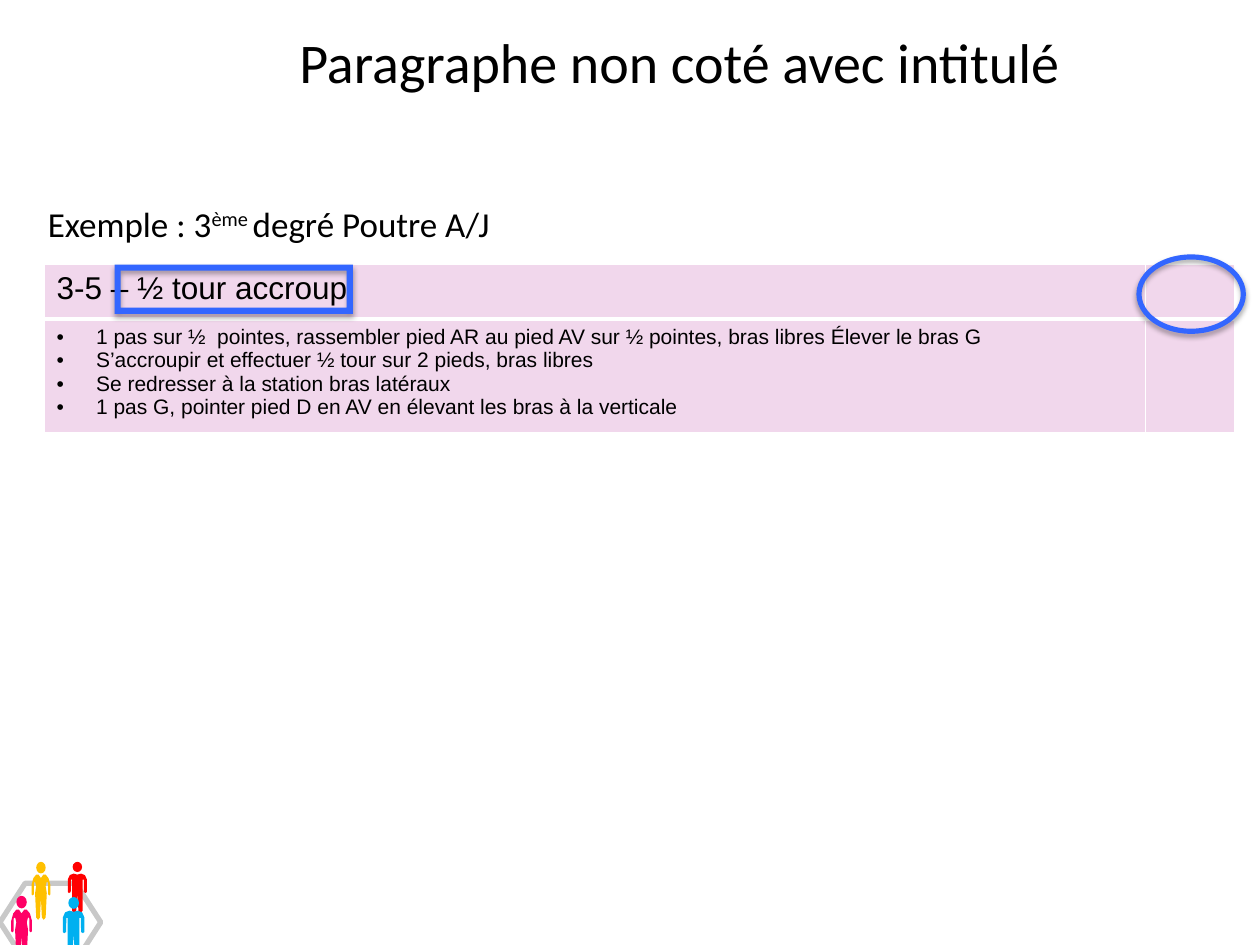
from lxml import etree
from pptx import Presentation
from pptx.dml.color import RGBColor
from pptx.enum.shapes import MSO_SHAPE
from pptx.enum.text import MSO_ANCHOR, PP_ALIGN
from pptx.oxml.ns import qn
from pptx.util import Pt

FRAME, DONUT, OVAL = MSO_SHAPE.FRAME, MSO_SHAPE.DONUT, MSO_SHAPE.OVAL
CENTER, LEFT = PP_ALIGN.CENTER, PP_ALIGN.LEFT
TOP, MIDDLE = MSO_ANCHOR.TOP, MSO_ANCHOR.MIDDLE

COLORS = {"text": "000000", "cell": "F1D7EC", "border": "FFFFFF", "mark": "3366FF",
          "hexagon": "C8C8C8", "pink": "FF0066", "yellow": "FFC000",
          "red": "FF0000", "blue": "00B0F0"}

TITLE = [("Paragraphe non coté avec intitulé", 0)]
EXAMPLE = [("Exemple : 3", 0), ("ème ", 30000), ("degré Poutre A/J", 0)]
ELEMENT = "3-5 – ½ tour accroupi"
STEPS = [
    "1 pas sur ½  pointes, rassembler pied AR au pied AV sur ½ pointes, bras libres Élever le bras G",
    "S’accroupir et effectuer ½ tour sur 2 pieds, bras libres",
    "Se redresser à la station bras latéraux",
    "1 pas G, pointer pied D en AV en élevant les bras à la verticale",
]
COLUMN_WIDTHS = [629.3, 51.1]
ROW_HEIGHTS = [31, 61]
MARKS = [(FRAME, 0.125, (65.5, 151.2, 136.1, 28.1)),
         (DONUT, 0.065, (649.4, 145.4, 62.6, 45.4))]

HEXAGON = [(14.4, 549.4), (0, 527), (14.4, 504.7), (43.2, 504.7), (57.6, 527), (43.2, 549.4)]
DRESS = [(0, .28), (.25, .22), (.5, .22), (.8, .28), (1, .4), (1, .56), (.9, .58),
         (.75, .56), (.75, .36), (.62, .34), (.5, .42), (.62, .54), (.5, .96),
         (.3, 1), (.1, .96), (0, .62)]
SUIT = [(0, .25), (.4, .23), (.8, .26), (1, .34), (1, .59), (.88, .61), (.7, .59),
        (.68, .35), (.55, .35), (.55, .96), (.35, 1), (.12, .96), (0, .63)]
PEOPLE = [("pink", DRESS, (6.4, 511.9, 11.9, 36)), ("yellow", DRESS, (18, 492.5, 10.8, 33.1)),
          ("red", SUIT, (38.8, 492.5, 10.8, 29.2)), ("blue", SUIT, (36, 512.6, 12.2, 33.9))]

prs = Presentation()
prs.slide_width, prs.slide_height = Pt(720), Pt(540)
slide = prs.slides.add_slide(prs.slide_layouts[6])
shapes = slide.shapes


def color(name):
    return RGBColor.from_string(COLORS[name])


def paint(shape, name):
    shape.shadow.inherit = False
    shape.fill.solid()
    shape.fill.fore_color.rgb = color(name)
    shape.line.fill.background()


def outline(points):
    scaled = [(Pt(x), Pt(y)) for x, y in points]
    builder = shapes.build_freeform(*scaled[0])
    builder.add_line_segments(scaled[1:], close=True)
    return builder.convert_to_shape()


def add_run(paragraph, text, size, font):
    run = paragraph.add_run()
    run.text = text
    run.font.size, run.font.name = Pt(size), font
    run.font.color.rgb = color("text")
    return run


def add_line(box, runs, size, align, anchor, spacing):
    frame = shapes.add_textbox(*map(Pt, box)).text_frame
    frame.word_wrap, frame.vertical_anchor = True, anchor
    paragraph = frame.paragraphs[0]
    paragraph.alignment, paragraph.line_spacing = align, spacing
    for text, baseline in runs:
        run = add_run(paragraph, text, size, "Calibri")
        if baseline:
            run.font._element.set("baseline", str(baseline))


def add_borders(cell, widths):
    tc_pr = cell._tc.get_or_add_tcPr()
    for side, width in zip("LRTB", widths):
        border = etree.SubElement(tc_pr, qn(f"a:ln{side}"), w=str(Pt(width)))
        fill = etree.SubElement(border, qn("a:solidFill"))
        etree.SubElement(fill, qn("a:srgbClr"), val=COLORS["border"])


def add_bullet(paragraph):
    p_pr = paragraph._p.get_or_add_pPr()
    p_pr.set("marL", str(Pt(22.5)))
    p_pr.set("indent", str(Pt(-22.5)))
    etree.SubElement(p_pr, qn("a:buFont"), typeface="Arial")
    etree.SubElement(p_pr, qn("a:buChar"), char="•")


def add_shadow(shape):
    effects = shape._element.spPr.find(qn("a:effectLst"))
    shadow = etree.SubElement(effects, qn("a:outerShdw"), blurRad=str(Pt(3.1)),
                              dist=str(Pt(1.8)), dir="5400000", rotWithShape="0")
    tint = etree.SubElement(shadow, qn("a:srgbClr"), val=COLORS["text"])
    etree.SubElement(tint, qn("a:alpha"), val="35000")


hexagon = outline(HEXAGON)
hexagon.shadow.inherit = False
hexagon.fill.background()
hexagon.line.color.rgb = color("hexagon")
hexagon.line.width = Pt(3)

for name, half, (left, top, width, height) in PEOPLE:
    middle = left + width / 2
    mirrored = half + [(-x, y) for x, y in half[-2:0:-1]]
    body = outline([(middle + x * width / 2, top + y * height) for x, y in mirrored])
    head = shapes.add_shape(OVAL, Pt(middle - width / 4), Pt(top),
                            Pt(width / 2), Pt(height / 5))
    for part in (body, head):
        paint(part, name)

add_line((20.2, 116.6, 668.2, 382.3), EXAMPLE, 20, LEFT, TOP, 0.8)
add_line((105.1, 9.4, 566.6, 51.1), TITLE, 32, CENTER, MIDDLE, 1)

table = shapes.add_table(2, 2, Pt(25.2), Pt(151.2), Pt(sum(COLUMN_WIDTHS)),
                         Pt(sum(ROW_HEIGHTS))).table
table.first_row = table.horz_banding = False
for column, width in zip(table.columns, COLUMN_WIDTHS):
    column.width = Pt(width)
for row, height, border_widths in zip(table.rows, ROW_HEIGHTS, [(1, 1, 1, 3), (1, 1, 3, 1)]):
    row.height = Pt(height)
    for cell in row.cells:
        add_borders(cell, border_widths)
        cell.fill.solid()
        cell.fill.fore_color.rgb = color("cell")

add_run(table.cell(0, 0).text_frame.paragraphs[0], ELEMENT, 18, "Arial")
steps_frame = table.cell(1, 0).text_frame
for index, step in enumerate(STEPS):
    paragraph = steps_frame.add_paragraph() if index else steps_frame.paragraphs[0]
    add_bullet(paragraph)
    add_run(paragraph, step, 12, "Arial")

for kind, thickness, box in MARKS:
    mark = shapes.add_shape(kind, *map(Pt, box))
    mark.adjustments[0] = thickness
    paint(mark, "mark")
    add_shadow(mark)

prs.save("out.pptx")
